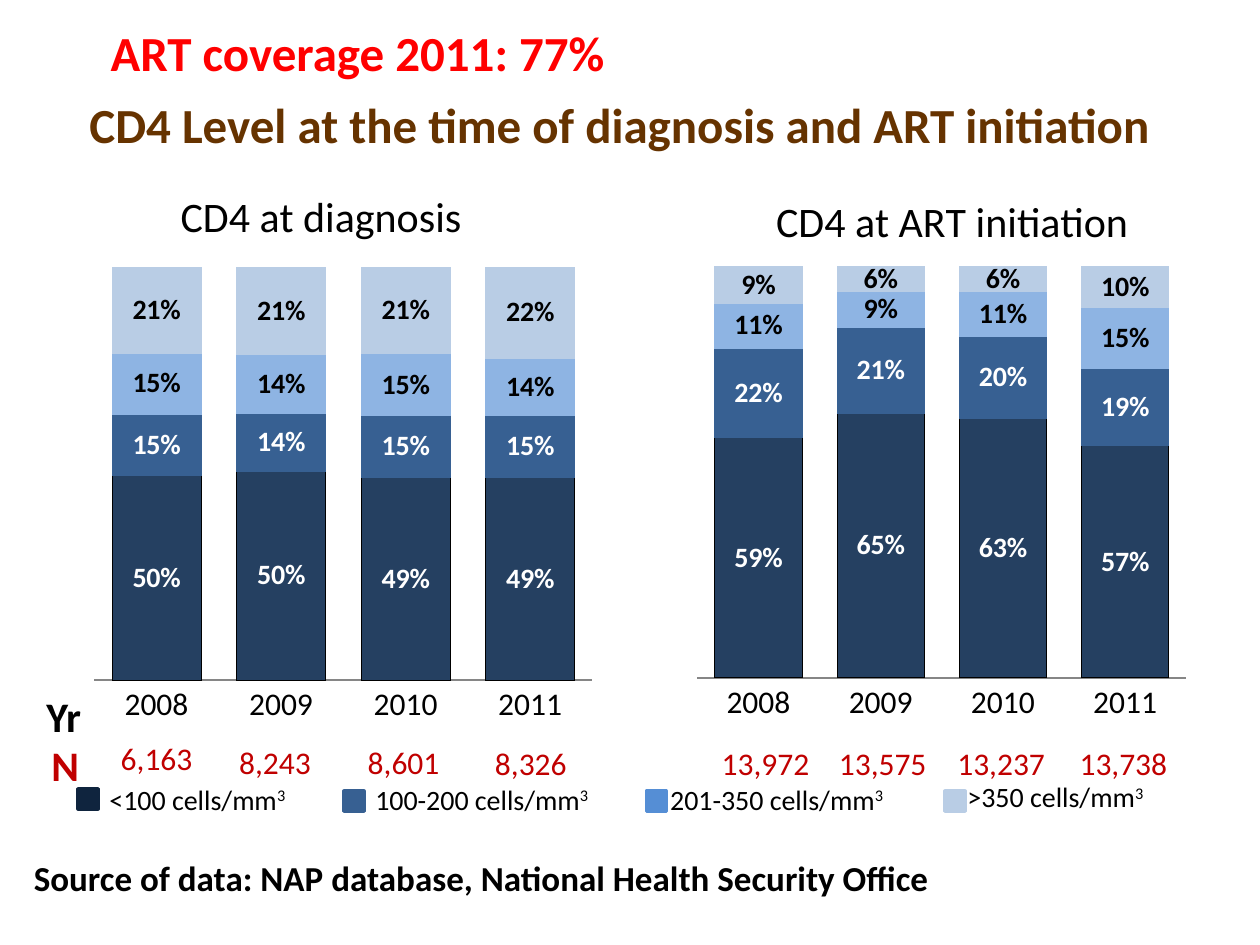
import pptx
import pptx.util
import pptx.chart.data
import pptx.dml.color
import pptx.enum.chart
import pptx.enum.shapes
import pptx.enum.text
import pptx.oxml
import pptx.oxml.ns

Inches = pptx.util.Inches
Pt = pptx.util.Pt
FONT = "Calibri"
RED, BLACK, WHITE = "C00000", "000000", "FFFFFF"

YEARS = ["2008", "2009", "2010", "2011"]
BANDS = [
    ("Series 1", "254061", BLACK, WHITE),
    ("Series 2", "376092", "376092", WHITE),
    ("Series 3", "8EB4E3", "8EB4E3", BLACK),
    ("Series 4", "B9CDE5", "B9CDE5", BLACK),
]
CHARTS = [
    dict(title="CD4 at ART initiation", at=(5.47, 1.25, 4.06, 4.82),
         plot=(0.016, 0.18, 0.956, 0.677), head=(0.155, 0.046),
         rows=[(0.59, 0.65, 0.63, 0.57), (0.22, 0.21, 0.20, 0.19),
               (0.11, 0.09, 0.11, 0.15), (0.09, 0.06, 0.06, 0.10)]),
    dict(title="CD4 at diagnosis", at=(0.55, 1.25, 4.22, 4.84),
         plot=(0.047, 0.18, 0.937, 0.677), head=(0.195, 0.037),
         rows=[(0.50, 0.50, 0.49, 0.49), (0.15, 0.14, 0.15, 0.15),
               (0.15, 0.14, 0.15, 0.14), (0.21, 0.21, 0.21, 0.22)]),
]
KEYS = [
    ("<100 cells/mm", "0F243E", 0.62, 6.26, 0.77, 6.16, 1.62),
    ("100-200 cells/mm", "376092", 2.73, 6.28, 2.88, 6.16, 1.92),
    ("201-350 cells/mm", "558ED5", 5.13, 6.28, 5.22, 6.16, 1.92),
    (">350 cells/mm", "B9CDE5", 7.5, 6.28, 7.58, 6.14, 1.62),
]
COUNTS = [
    ("6,163", 0.86, 5.82, 0.78), ("8,243", 1.8, 5.85, 0.78),
    ("8,601", 2.82, 5.85, 0.78), ("8,326", 3.83, 5.86, 0.78),
    ("13,972", 5.63, 5.86, 0.9), ("13,575", 6.56, 5.86, 0.9),
    ("13,237", 7.5, 5.86, 0.9), ("13,738", 8.47, 5.86, 0.9),
]
LINES = [
    ("ART coverage 2011: 77%", (0.78, 0.13, 4.69, 0.57), 28, "FF0000"),
    ("Yr", (0.27, 5.43, 0.48, 0.5), 24, BLACK),
    ("N", (0.31, 5.82, 0.42, 0.5), 24, RED),
    ("Source of data: NAP database, National Health Security Office",
     (0.17, 6.75, 9.33, 0.44), 20, BLACK),
]


def rgb(code):
    return pptx.dml.color.RGBColor.from_string(code)


def style(font, size, color, bold=False):
    font.name, font.size, font.bold = FONT, Pt(size), bold
    font.color.rgb = rgb(color)


def paint(part, fill, line):
    part.fill.solid()
    part.fill.fore_color.rgb = rgb(fill)
    part.line.color.rgb = rgb(line)


def write(slide, text, at, size, color, bold=False, wrap=True, power=None):
    frame = slide.shapes.add_textbox(*map(Inches, at)).text_frame
    frame.word_wrap = wrap
    para = frame.paragraphs[0]
    run = para.add_run()
    run.text = text
    style(run.font, size, color, bold)
    if power:
        run = para.add_run()
        run.text = power
        style(run.font, size, color, bold)
        run._r.get_or_add_rPr().set("baseline", "30000")
    return frame


def place(node, spot, slot):
    for old in node.findall(pptx.oxml.ns.qn("c:layout")):
        node.remove(old)
    tags = "".join(f'<c:{k}Mode val="edge"/>' for k in "xy")
    tags += "".join(f'<c:{k} val="{v}"/>' for k, v in zip("xywh", spot))
    inner = '<c:layoutTarget val="inner"/>' if len(spot) == 4 else ""
    node.insert(slot, pptx.oxml.parse_xml(
        f'<c:layout {pptx.oxml.ns.nsdecls("c")}><c:manualLayout>'
        f'{inner}{tags}</c:manualLayout></c:layout>'))


def plot(slide, item):
    data = pptx.chart.data.CategoryChartData(number_format="0%")
    data.categories = YEARS
    for band, row in zip(BANDS, item["rows"]):
        data.add_series(band[0], row)
    kind = pptx.enum.chart.XL_CHART_TYPE.COLUMN_STACKED_100
    chart = slide.shapes.add_chart(kind, *map(Inches, item["at"]), data).chart
    style(chart.font, 18, BLACK)
    chart.has_legend = False
    chart.has_title = True
    run = chart.chart_title.text_frame.paragraphs[0].add_run()
    run.text = item["title"]
    style(run.font, 24, BLACK)
    place(chart.chart_title._element, item["head"], 1)
    place(chart._chartSpace.chart.plotArea, item["plot"], 0)
    none = pptx.enum.chart.XL_TICK_MARK.NONE
    axis = chart.category_axis
    axis.major_tick_mark = axis.minor_tick_mark = none
    axis.format.line.color.rgb = rgb("868686")
    scale = chart.value_axis
    scale.visible = scale.has_major_gridlines = False
    scale.minimum_scale, scale.maximum_scale = 0, 1
    scale.tick_labels.number_format = "0%"
    scale.tick_labels.number_format_is_linked = False
    bars = chart.plots[0]
    bars.gap_width, bars.overlap, bars.vary_by_categories = 40, 100, False
    for line, (name, fill, edge, ink) in zip(bars.series, BANDS):
        paint(line.format, fill, edge)
        tags = line.data_labels
        tags.show_value = True
        tags.number_format, tags.number_format_is_linked = "0%", False
        tags.position = pptx.enum.chart.XL_LABEL_POSITION.CENTER
        style(tags.font, 16, ink, True)


def main():
    deck = pptx.Presentation()
    deck.slide_width, deck.slide_height = Inches(10), Inches(7.5)
    slide = deck.slides.add_slide(deck.slide_layouts[6])
    title = write(slide, "CD4 Level at the time of diagnosis and ART initiation",
                  (0, 0.7, 9.83, 1.03), 28, "663300", True)
    title.paragraphs[0].alignment = pptx.enum.text.PP_ALIGN.CENTER
    for item in CHARTS:
        plot(slide, item)
    rect = pptx.enum.shapes.MSO_SHAPE.RECTANGLE
    for text, color, x, y, left, top, wide in KEYS:
        box = slide.shapes.add_shape(rect, *map(Inches, (x, y, 0.16, 0.16)))
        box.shadow.inherit = False
        paint(box, color, color)
        box.line.width = Pt(2)
        write(slide, text, (left, top, wide, 0.37), 16, BLACK, wrap=False, power="3")
    for text, at, size, color in LINES:
        write(slide, text, at, size, color, True, wrap=at[2] > 1)
    for text, x, y, wide in COUNTS:
        write(slide, text, (x, y, wide, 0.4), 18, RED, wrap=False)
    deck.save("out.pptx")


if __name__ == "__main__":
    main()
